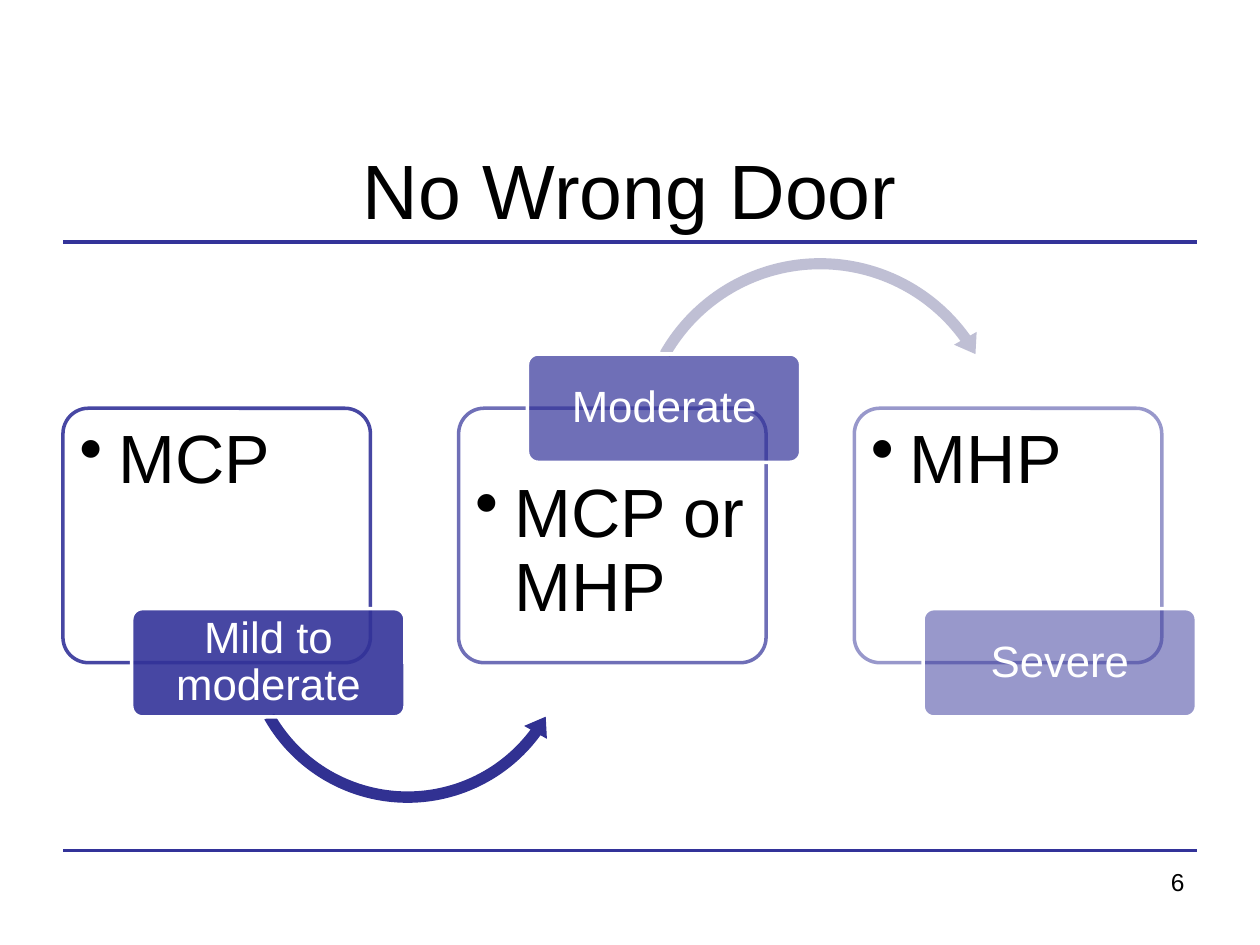
"""Build the No Wrong Door slide: three care levels linked by circular arrows."""
import pptx
import pptx.dml.color
import pptx.enum.shapes
import pptx.enum.text
import pptx.oxml.ns
import pptx.util
from lxml import etree

Pt = pptx.util.Pt
SHAPE = pptx.enum.shapes.MSO_SHAPE
ALIGN = pptx.enum.text.PP_ALIGN
ANCHOR = pptx.enum.text.MSO_ANCHOR
COLORS = {"text": "000000", "paper": "FFFFFF", "accent": "333399",
          "first_arrow": "313192", "second_arrow": "BFBFD4"}
CARD_LEFT, CARD_TOP, CARD_STEP = 36, 233.3, 226.1
CARD_WIDTH, CARD_HEIGHT = 175.7, 145.4
TAG_OFFSET, TAG_WIDTH, TAG_HEIGHT = 39.3, 156.2, 61.9
LOW_TAG_TOP, HIGH_TAG_TOP = 347.8, 202.3
LOW_TEXT_TOP, HIGH_TEXT_TOP = 267.8, 236.9
BULLET_INDENT = 22.3


def subelement(parent, tag, **attributes):
    return etree.SubElement(parent, pptx.oxml.ns.qn(tag), **attributes)


def paint(fill, color, opacity=100):
    fill.solid()
    fill.fore_color.rgb = pptx.dml.color.RGBColor.from_string(COLORS[color])
    if opacity < 100:
        for scheme in fill._xPr.iter(pptx.oxml.ns.qn("a:solidFill")):
            subelement(scheme[0], "a:alpha", val=str(opacity * 1000))
            break


def write(paragraph, words, size, color="text", align=ALIGN.LEFT):
    paragraph.alignment = align
    run = paragraph.add_run()
    run.text = words
    run.font.name = "Arial"
    run.font.size = Pt(size)
    run.font.color.rgb = pptx.dml.color.RGBColor.from_string(COLORS[color])


def add_rule(slide, top):
    rule = slide.shapes.add_connector(
        pptx.enum.shapes.MSO_CONNECTOR.STRAIGHT, Pt(36), Pt(top), Pt(684), Pt(top))
    paint(rule.line.fill, "accent")
    rule.line.width = Pt(2.25)
    subelement(rule._element.spPr, "a:effectLst")


def add_panel(slide, bounds, fill, line):
    panel = slide.shapes.add_shape(SHAPE.ROUNDED_RECTANGLE, *map(Pt, bounds))
    panel.adjustments[0] = 0.1
    panel.shadow.inherit = False
    paint(panel.fill, *fill)
    paint(panel.line.fill, *line)
    panel.line.width = Pt(2)


def add_text_frame(slide, bounds, margins=(7.2, 3.6), anchor=ANCHOR.TOP):
    frame = slide.shapes.add_textbox(*map(Pt, bounds)).text_frame
    frame.word_wrap = True
    frame.vertical_anchor = anchor
    frame.margin_left = frame.margin_right = Pt(margins[0])
    frame.margin_top = frame.margin_bottom = Pt(margins[1])
    return frame


def add_card(slide, left, text_top, plan, opacity):
    add_panel(slide, (left, CARD_TOP, CARD_WIDTH, CARD_HEIGHT),
              ("paper", 90), ("accent", opacity))
    frame = add_text_frame(slide, (left + 3.6, text_top, 169.2, 107.3), (5.8, 5.8))
    item = frame.paragraphs[0]
    item.level = 1
    properties = item._p.get_or_add_pPr()
    properties.set("marL", str(Pt(BULLET_INDENT)))
    properties.set("indent", str(-Pt(BULLET_INDENT)))
    subelement(properties, "a:buChar", char="•")
    item.line_spacing = 0.9
    write(item, plan, 39)


def add_tag(slide, left, top, severity, opacity):
    add_panel(slide, (left, top, TAG_WIDTH, TAG_HEIGHT),
              ("accent", opacity), ("paper",))
    frame = add_text_frame(
        slide, (left + 1.8, top + 1.8, TAG_WIDTH - 3.6, TAG_HEIGHT - 3.6),
        (3.6, 2.2), ANCHOR.MIDDLE)
    label = frame.paragraphs[0]
    label.line_spacing = 0.9
    write(label, severity, 25, "paper", ALIGN.CENTER)


def add_arrow(slide, kind, left, top, size, color, adjustments):
    arrow = slide.shapes.add_shape(kind, Pt(left), Pt(top), Pt(size), Pt(size))
    for index, value in enumerate(adjustments):
        arrow.adjustments[index] = value
    arrow.shadow.inherit = False
    paint(arrow.fill, color)
    arrow.line.fill.background()


def main():
    deck = pptx.Presentation()
    deck.slide_width, deck.slide_height = Pt(720), Pt(540)
    slide = deck.slides.add_slide(deck.slide_layouts[5])

    add_rule(slide, 486)
    add_rule(slide, 138.2)
    title = slide.shapes.title
    title.left, title.top, title.width, title.height = map(Pt, (36, 72, 648, 72))
    title.text_frame.vertical_anchor = ANCHOR.MIDDLE
    write(title.text_frame.paragraphs[0], "No Wrong Door", 44, align=ALIGN.CENTER)
    page = add_text_frame(slide, (516.2, 491.8, 167.8, 37.4))
    write(page.paragraphs[0], "6", 14, align=ALIGN.RIGHT)

    levels = [
        ("MCP", "Mild to moderate", 90, False,
         (SHAPE.LEFT_CIRCULAR_ARROW, 134.6, 266.4, 196.6, "first_arrow",
          (0.033, 4.055, 21.81, 90.245, 0.038))),
        ("MCP or MHP", "Moderate", 70, True,
         (SHAPE.CIRCULAR_ARROW, 359.3, 143.3, 218.9, "second_arrow",
          (0.029, 3.61, 194.635, 125.755, 0.034))),
        ("MHP", "Severe", 50, False, None),
    ]
    for index, (plan, severity, opacity, tag_above, arrow) in enumerate(levels):
        left = CARD_LEFT + index * CARD_STEP
        add_card(slide, left, LOW_TEXT_TOP if tag_above else HIGH_TEXT_TOP,
                 plan, opacity)
        if arrow:
            add_arrow(slide, *arrow)
        add_tag(slide, left + TAG_OFFSET, HIGH_TAG_TOP if tag_above else LOW_TAG_TOP,
                severity, opacity)

    deck.save("out.pptx")


if __name__ == "__main__":
    main()
